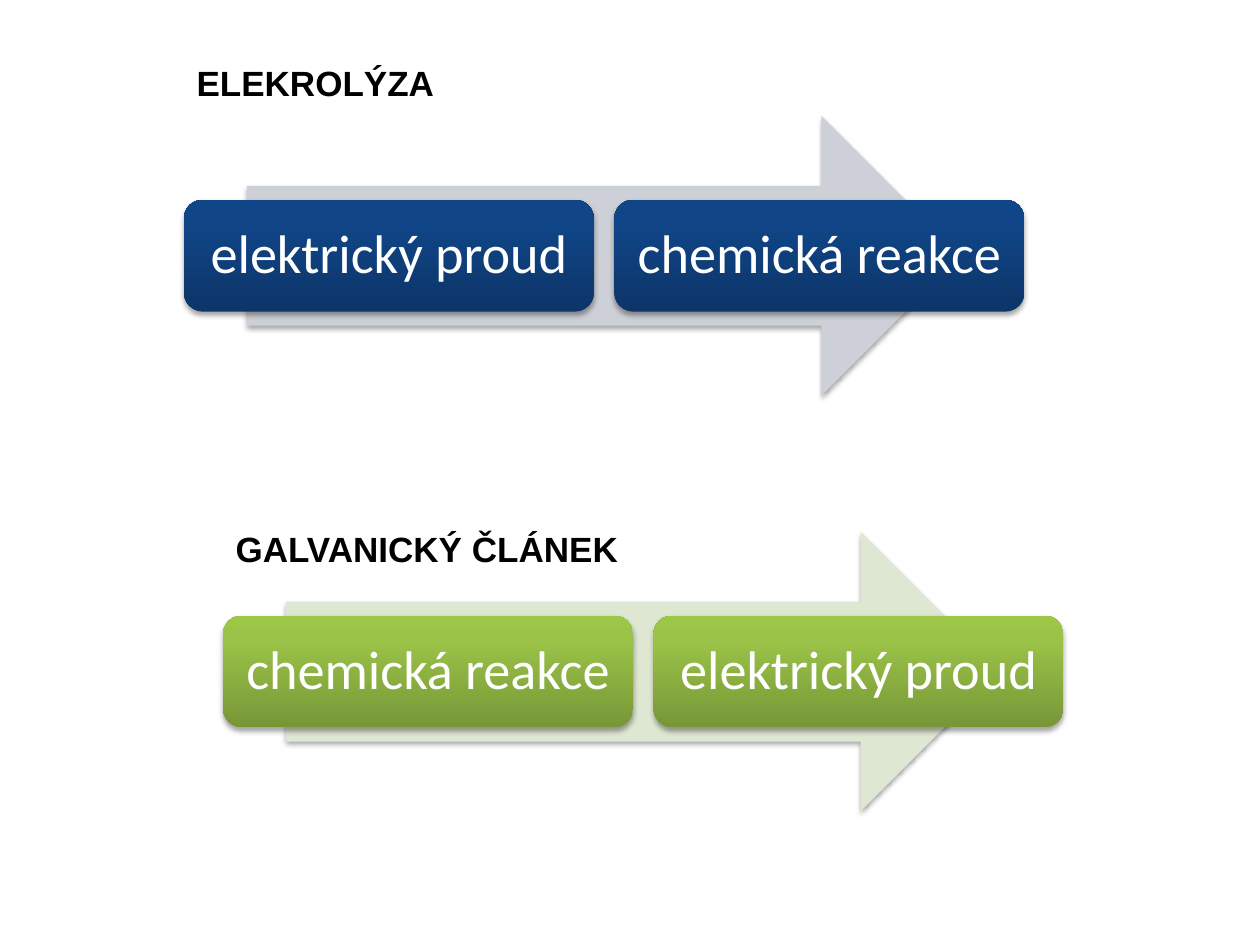
from dataclasses import dataclass

from lxml import etree
from pptx import Presentation
from pptx import util as u
from pptx.dml.color import RGBColor
from pptx.enum import shapes, text
from pptx.oxml import ns


@dataclass(frozen=True)
class Palette:
    arrow: str
    stops: tuple  # (position in percent, colour), from bottom to top


@dataclass(frozen=True)
class Theme:
    blue: Palette = Palette("CDD0D7", ((0, "0D3568"), (80, "104587"), (100, "0E458A")))
    green: Palette = Palette("DEE7D1", ((0, "779737"), (80, "9BC348"), (100, "9DC746")))
    heading_color: str = "000000"
    card_color: str = "FFFFFF"
    heading_font: str = "Arial"
    card_font: str = "Calibri"
    heading_size: int = 20
    card_size: int = 31


class ProcessSlide:
    """Holds the theme and the slide; lengths are in grid cells of 0.1 inch."""

    CELL = u.Inches(0.1)

    def __init__(self, slide, theme):
        self.slide = slide
        self.theme = theme

    def grid(self, *cells):
        return [round(cell * self.CELL) for cell in cells]

    def add_words(self, frame, words, font, size, color, bold=False):
        paragraph = frame.paragraphs[0]
        run = paragraph.add_run()
        run.text = words
        run.font.name = font
        run.font.size = u.Pt(size)
        run.font.bold = bold
        run.font.color.rgb = RGBColor.from_string(color)
        return paragraph

    def add_shadow(self, shape):
        properties = shape._element.spPr
        effects = etree.SubElement(properties, ns.qn("a:effectLst"))
        shadow = etree.SubElement(
            effects, ns.qn("a:outerShdw"), blurRad=str(u.Pt(3.1)), dist=str(u.Pt(1.8)),
            dir="5400000", rotWithShape="0")
        color = etree.SubElement(shadow, ns.qn("a:srgbClr"), val="000000")
        etree.SubElement(color, ns.qn("a:alpha"), val="35000")

    def fill_gradient(self, shape, stops):
        shape.fill.gradient()
        shape.fill.gradient_angle = 90
        stop_list = shape._element.spPr.find(".//" + ns.qn("a:gsLst"))
        for old_stop in list(stop_list):
            stop_list.remove(old_stop)
        for position, color in stops:
            stop = etree.SubElement(stop_list, ns.qn("a:gs"), pos=str(position * 1000))
            etree.SubElement(stop, ns.qn("a:srgbClr"), val=color)

    def heading(self, index, words, left, top, width):
        shape = self.slide.placeholders[index]
        shape.left, shape.top, shape.width, shape.height = self.grid(left, top, width, 4.4)
        frame = shape.text_frame
        frame.word_wrap = False
        frame.auto_size = text.MSO_AUTO_SIZE.NONE
        frame.vertical_anchor = text.MSO_ANCHOR.TOP
        theme = self.theme
        paragraph = self.add_words(frame, words, theme.heading_font, theme.heading_size,
                                   theme.heading_color, bold=True)
        paragraph.space_before = u.Pt(0)
        paragraph.line_spacing = 1.0

    def arrow(self, left, top, width, height, color):
        shape = self.slide.shapes.add_shape(
            shapes.MSO_SHAPE.RIGHT_ARROW, *self.grid(left, top, width, height))
        shape.fill.solid()
        shape.fill.fore_color.rgb = RGBColor.from_string(color)
        shape.line.fill.background()
        self.add_shadow(shape)

    def card(self, words, left, top, width, height, stops):
        shape = self.slide.shapes.add_shape(
            shapes.MSO_SHAPE.ROUNDED_RECTANGLE, *self.grid(left, top, width, height))
        self.fill_gradient(shape, stops)
        shape.line.fill.background()
        self.add_shadow(shape)
        frame = shape.text_frame
        frame.word_wrap = True
        frame.vertical_anchor = text.MSO_ANCHOR.MIDDLE
        frame.margin_left = frame.margin_right = u.Inches(0.13)
        frame.margin_top = frame.margin_bottom = u.Inches(0.13)
        theme = self.theme
        paragraph = self.add_words(frame, words, theme.card_font, theme.card_size,
                                   theme.card_color)
        paragraph.alignment = text.PP_ALIGN.CENTER
        paragraph.line_spacing = 0.9

    def process(self, steps, left, top, palette):
        """An arrow over 85 % of the width, with a row of cards in front."""
        width, height, gap = 66.7, 22.2, 1.63
        self.arrow(left + 0.075 * width, top, 0.85 * width, height, palette.arrow)
        card_width = (width - gap * (len(steps) - 1)) / len(steps)
        for column, words in enumerate(steps):
            self.card(words, left + column * (card_width + gap), top + 0.3 * height,
                      card_width, 0.4 * height, palette.stops)

    def remove_empty_placeholders(self):
        for shape in list(self.slide.placeholders):
            if not shape.text_frame.text:
                shape._element.getparent().remove(shape._element)


def main():
    presentation = Presentation()
    presentation.slide_width = u.Inches(10)
    presentation.slide_height = u.Inches(7.5)
    theme = Theme()
    # The comparison layout has two heading placeholders: 1 and 3
    slide = presentation.slides.add_slide(presentation.slide_layouts[4])
    page = ProcessSlide(slide, theme)
    current, reaction = "elektrický proud", "chemická reakce"

    # Electrolysis
    page.heading(1, "ELEKROLÝZA", 14.6, 4.4, 21.1)
    page.process([current, reaction], 14.6, 9.2, theme.blue)

    # Galvanic cell
    page.heading(3, "GALVANICKÝ ČLÁNEK", 17.7, 41.4, 32.7)
    page.process([reaction, current], 17.7, 42.2, theme.green)

    page.remove_empty_placeholders()
    presentation.save("out.pptx")


if __name__ == "__main__":
    main()
